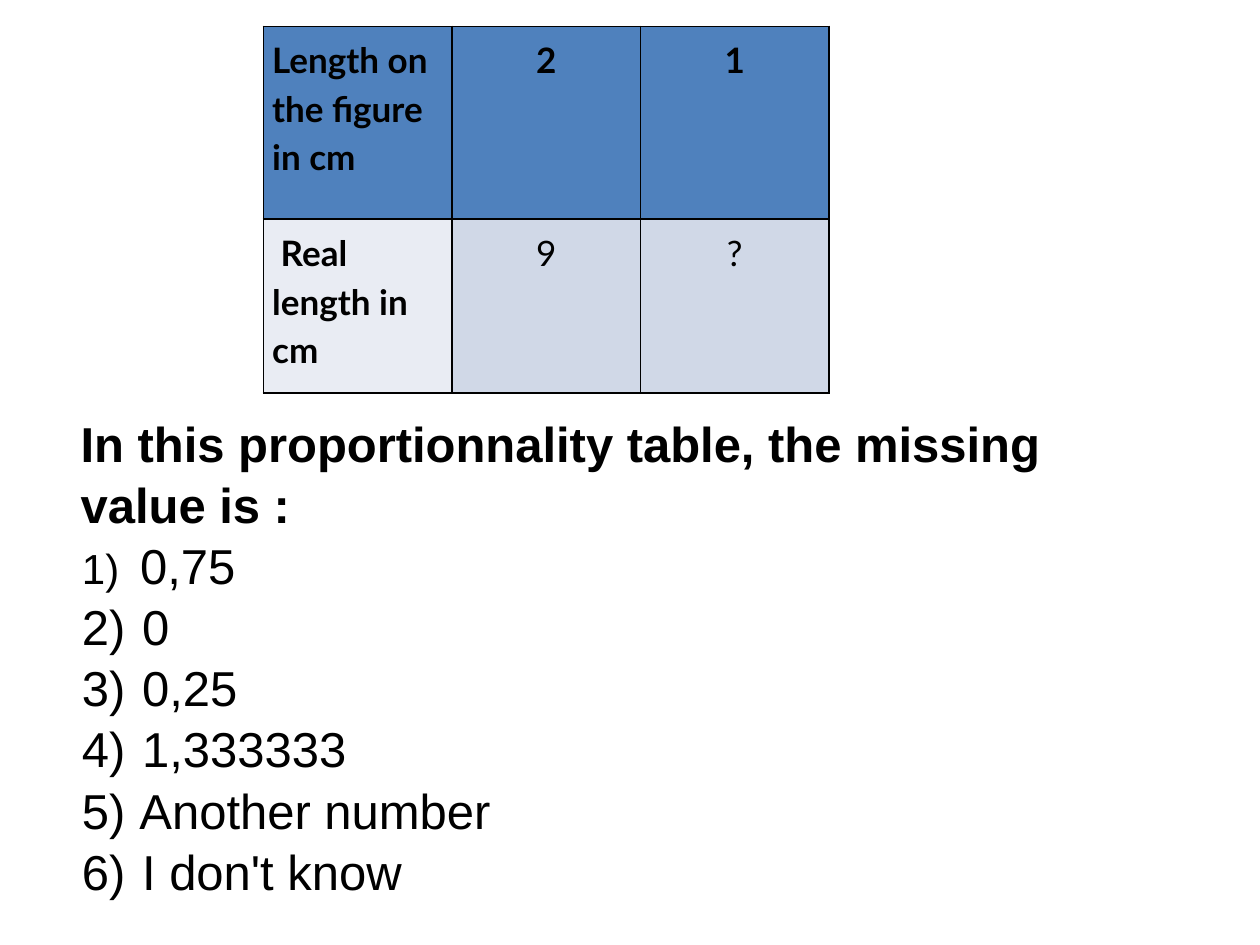
from lxml.etree import SubElement
from pptx import Presentation
from pptx.dml.color import RGBColor
from pptx.enum.text import MSO_ANCHOR as Anchor, MSO_AUTO_SIZE as AutoSize, PP_ALIGN as Align
from pptx.oxml.ns import qn
from pptx.util import Inches, Pt

ROWS = [
    ("Length on the figure in cm", "2", "1"),
    (" Real length in cm", "9", "?"),
]
ROW_FILLS = [("4F81BD", "4F81BD", "4F81BD"), ("E9ECF3", "D0D8E7", "D0D8E7")]
ROW_HEIGHTS = (1.53, 1.38)
QUESTION = "In this proportionnality table, the missing value is\u00a0:".replace("\u00a0", " ")
ANSWERS = ["0,75", "0", "0,25", "1,333333", "Another number", "I don't know"]


def color(value):
    return RGBColor.from_string(value)


def add_run(paragraph, text, font_name, size, bold=False):
    run = paragraph.add_run()
    run.text = text
    run.font.name = font_name
    run.font.size = Pt(size)
    run.font.bold = bold
    run.font.color.rgb = color("000000")


def add_borders(cell, width=0.96):
    properties = cell._tc.get_or_add_tcPr()
    for position, side in enumerate(("lnL", "lnR", "lnT", "lnB")):
        line = SubElement(properties, qn(f"a:{side}"), w=str(Pt(width)))
        fill = SubElement(line, qn("a:solidFill"))
        SubElement(fill, qn("a:srgbClr"), val="000000")
        properties.insert(position, line)


def add_length_table(slide, left, top, width, height):
    frame = slide.shapes.add_table(len(ROWS), len(ROWS[0]), left, top, width, height)
    table = frame.table
    for column in table.columns:
        column.width = width // len(ROWS[0])
    for row_index, (texts, fills) in enumerate(zip(ROWS, ROW_FILLS)):
        table.rows[row_index].height = Inches(ROW_HEIGHTS[row_index])
        for column_index, (text, fill) in enumerate(zip(texts, fills)):
            cell = table.cell(row_index, column_index)
            cell.margin_left = cell.margin_right = Inches(0.07)
            cell.margin_top = cell.margin_bottom = Inches(0.05)
            cell.fill.solid()
            cell.fill.fore_color.rgb = color(fill)
            add_borders(cell)
            paragraph = cell.text_frame.paragraphs[0]
            paragraph.alignment = Align.CENTER if column_index else Align.LEFT
            paragraph.line_spacing = 1.15
            add_run(paragraph, text, "Lato", 20, row_index == 0 or column_index == 0)


def format_paragraph(paragraph, numbered):
    paragraph.space_before = paragraph.space_after = Pt(0)
    paragraph.line_spacing = 1.04
    paragraph.alignment = Align.LEFT
    properties = paragraph._p.get_or_add_pPr()
    properties.set("marL", str(Inches(0.38) if numbered else 0))
    properties.set("indent", str(Inches(-0.37) if numbered else 0))
    if numbered:
        SubElement(properties, qn("a:buFont"), typeface="Arial")
        SubElement(properties, qn("a:buAutoNum"), type="arabicParenR")
    else:
        SubElement(properties, qn("a:buNone"))


def fill_question(body, left, top, width, height):
    body.left, body.top, body.width, body.height = left, top, width, height
    frame = body.text_frame
    frame.word_wrap = True
    frame.auto_size = AutoSize.NONE
    frame.vertical_anchor = Anchor.TOP
    question = frame.paragraphs[0]
    format_paragraph(question, False)
    add_run(question, QUESTION, "Arial", 28, True)
    for index, answer in enumerate(ANSWERS):
        paragraph = frame.add_paragraph()
        format_paragraph(paragraph, True)
        add_run(paragraph, " ", "Arial", 28 if index else 24)
        add_run(paragraph, answer, "Arial", 28)


def main():
    presentation = Presentation()
    presentation.slide_width = Inches(10)
    presentation.slide_height = Inches(7.5)
    slide = presentation.slides.add_slide(presentation.slide_layouts[1])
    title = slide.shapes.title._element
    title.getparent().remove(title)
    fill_question(slide.placeholders[1], Inches(0.54), Inches(3.21), Inches(8.82), Inches(5.03))
    add_length_table(slide, Inches(2.09), Inches(0.21), Inches(4.49), Inches(2.91))
    presentation.save("out.pptx")


if __name__ == "__main__":
    main()
